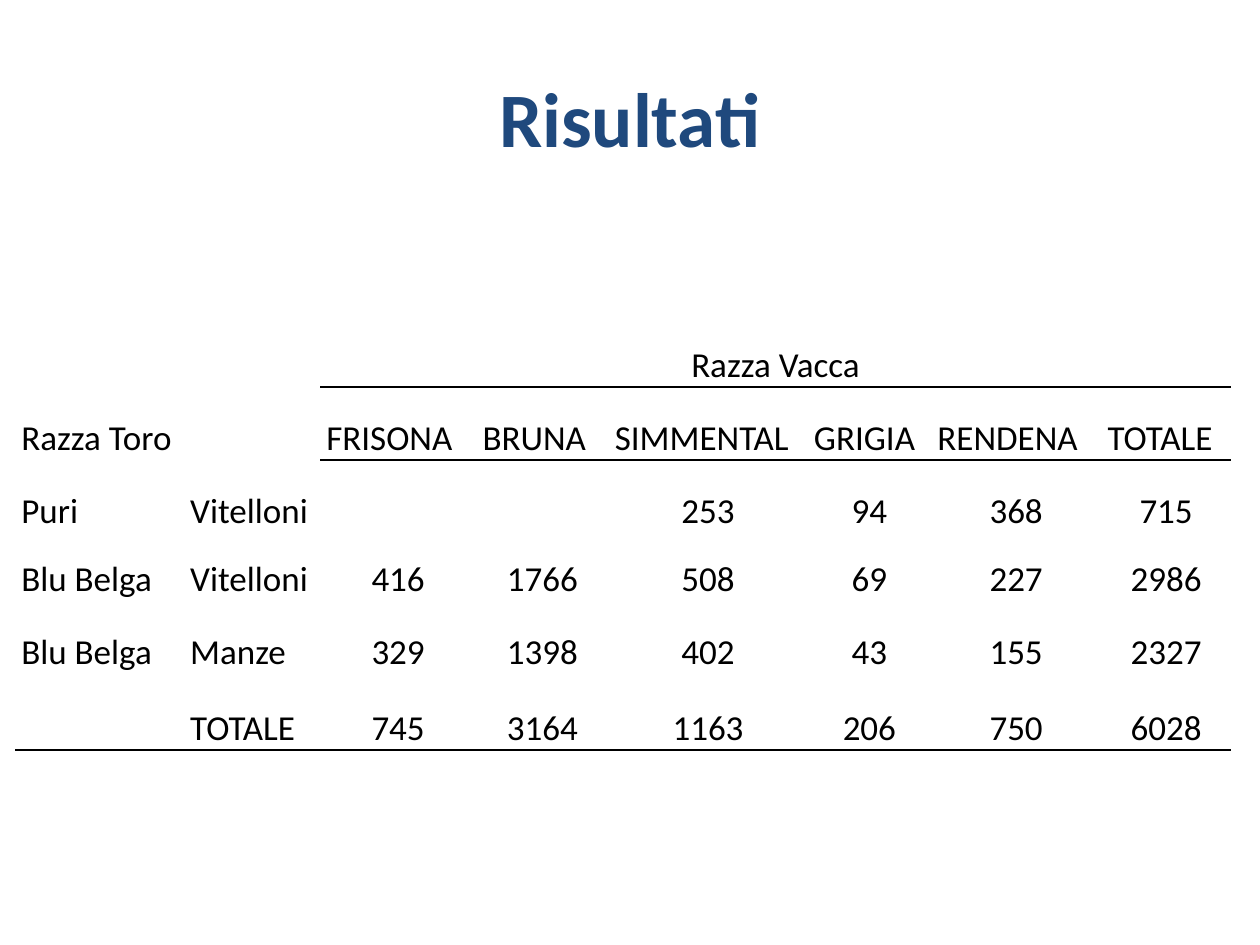
"""Build the "Risultati" slide with the table of cattle by bull and cow breed."""
from dataclasses import dataclass

from lxml import etree
from pptx import Presentation
from pptx.dml.color import RGBColor
from pptx.enum.text import MSO_ANCHOR as Anchor, PP_ALIGN as Align
from pptx.oxml.ns import qn
from pptx.util import Pt


@dataclass(frozen=True)
class Theme:
    font: str = "Calibri"
    title: str = "1F497D"
    ink: str = "000000"
    title_size: int = 44
    table_size: int = 20


theme = Theme()


def style(p, size, color, align, bold=False):
    p.alignment = align
    p.font.name = theme.font
    p.font.size = Pt(size)
    p.font.bold = bold
    p.font.color.rgb = RGBColor.from_string(color)


def border(cell, side):
    ln = etree.Element(qn(f"a:{side}"), w=str(Pt(1)))
    fill = etree.SubElement(ln, qn("a:solidFill"))
    etree.SubElement(fill, qn("a:srgbClr"), val=theme.ink)
    cell._tc.get_or_add_tcPr().insert(0, ln)


prs = Presentation()
prs.slide_width, prs.slide_height = Pt(720), Pt(540)
s = prs.slides.add_slide(prs.slide_layouts[6])

title = s.shapes.add_textbox(Pt(36), Pt(21.6), Pt(648), Pt(90))
tf = title.text_frame
tf.word_wrap = True
tf.vertical_anchor = Anchor.MIDDLE
p = tf.paragraphs[0]
p.text = "Risultati"
style(p, theme.title_size, theme.title, Align.CENTER, bold=True)

rows = [
    ["", "", "Razza Vacca", "", "", "", "", ""],
    ["Razza Toro", "", "FRISONA", "BRUNA", "SIMMENTAL", "GRIGIA", "RENDENA", "TOTALE"],
    ["Puri", "Vitelloni", "", "", "253", "94", "368", "715"],
    ["Blu Belga", "Vitelloni", "416", "1766", "508", "69", "227", "2986"],
    ["Blu Belga", "Manze", "329", "1398", "402", "43", "155", "2327"],
    ["", "TOTALE", "745", "3164", "1163", "206", "750", "6028"],
]
widths = [96.5, 77.8, 89.3, 75.6, 113.8, 70.6, 97.2, 74.2]
heights = [41.8, 41.8, 41.8, 38.9, 41.8, 43.2]
header_row, last_row = 1, len(rows) - 1
first_breed = 2

frame = s.shapes.add_table(len(rows), len(widths), Pt(8.6), Pt(179.3),
                           Pt(sum(widths)), Pt(sum(heights)))
table = frame.table
table.first_row = table.horz_banding = False
no_style = "{2D5ABB26-0587-4C30-8999-92F81FD0307C}"
table._tbl.tblPr.find(qn("a:tableStyleId")).text = no_style
for column, width in zip(table.columns, widths):
    column.width = Pt(width)
for row, height in zip(table.rows, heights):
    row.height = Pt(height)

for i, row in enumerate(rows):
    for j, text in enumerate(row):
        cell = table.cell(i, j)
        cell.fill.background()
        cell.vertical_anchor = Anchor.BOTTOM
        cell.margin_left = cell.margin_right = Pt(3.6)
        cell.margin_top = cell.margin_bottom = 0
        p = cell.text_frame.paragraphs[0]
        p.text = text
        p.line_spacing = 1.15
        centred = j >= first_breed and i != header_row
        style(p, theme.table_size, theme.ink, Align.CENTER if centred else Align.LEFT)
        if i == last_row or (i == 0 and j >= first_breed):
            border(cell, "lnB")
        elif i == header_row and j >= first_breed:
            border(cell, "lnT")

table.cell(0, first_breed).merge(table.cell(0, len(widths) - 1))
table.cell(2, 1).merge(table.cell(2, 2))

prs.save("out.pptx")
